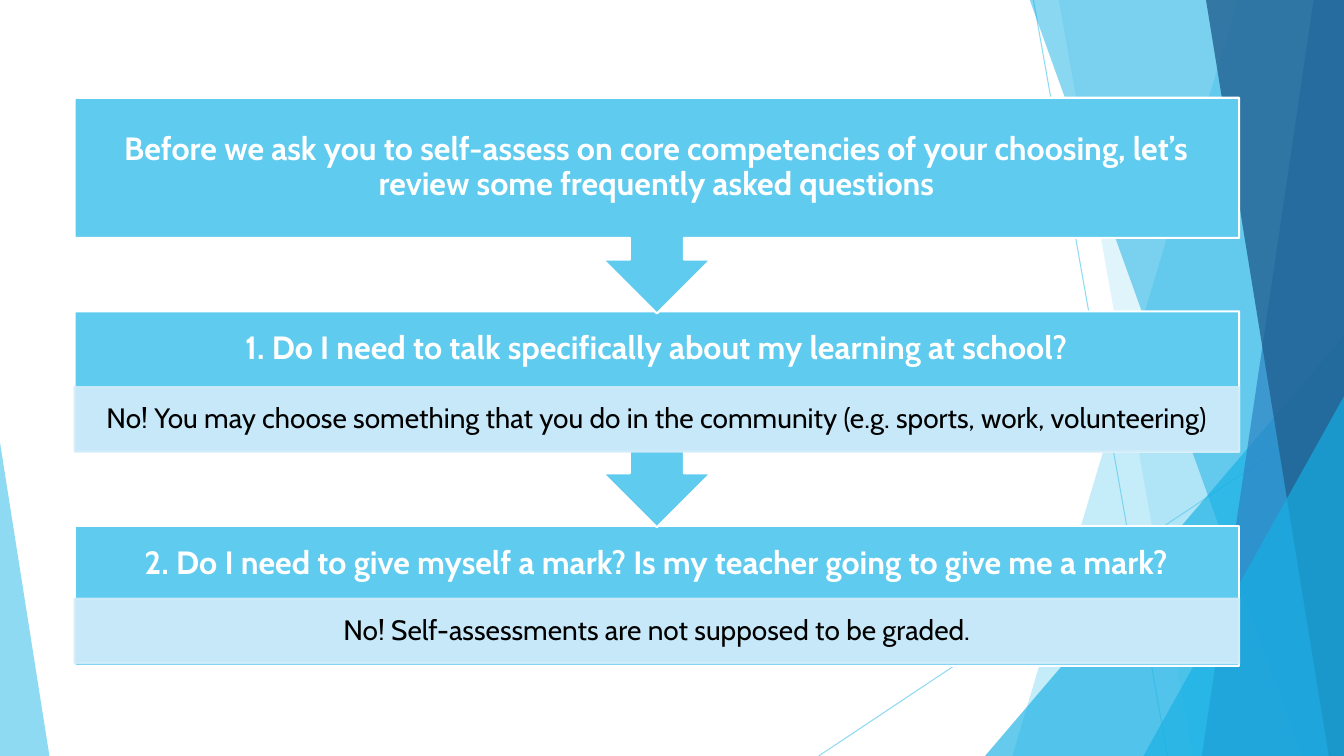
from pptx import Presentation
from pptx.dml.color import RGBColor
from pptx.enum.shapes import MSO_CONNECTOR, MSO_SHAPE
from pptx.enum.text import MSO_ANCHOR, PP_ALIGN
from pptx.oxml.ns import qn
from pptx.util import Pt
from lxml import etree

STRAIGHT = MSO_CONNECTOR.STRAIGHT
TRIANGLE = MSO_SHAPE.ISOSCELES_TRIANGLE
RECTANGLE = MSO_SHAPE.RECTANGLE
CALLOUT = MSO_SHAPE.DOWN_ARROW_CALLOUT
MIDDLE = MSO_ANCHOR.MIDDLE
CENTER = PP_ALIGN.CENTER

PX = 9144
WIDTH, HEIGHT = 1333, 750
SKY, CYAN, BLUE, NAVY = "5FCBEF", "17B0E4", "2E83C3", "226292"
PALE, WHITE, BLACK = "D2ECF9", "FFFFFF", "000000"


def paint(fill, color, opacity=100):
    fill.solid()
    fill.fore_color.rgb = RGBColor.from_string(color)
    if opacity < 100:
        tint = fill._xPr.find(qn("a:solidFill"))[0]
        etree.SubElement(tint, qn("a:alpha"), val=str(opacity * 1000))


def write(box, text, size, color, bold, inset_x, inset_y):
    frame = box.text_frame
    frame.word_wrap = True
    frame.vertical_anchor = MIDDLE
    frame.margin_left = frame.margin_right = inset_x * PX
    frame.margin_top = frame.margin_bottom = inset_y * PX
    para = frame.paragraphs[0]
    para.alignment = CENTER
    para.line_spacing = 0.9
    span = para.add_run()
    span.text = text
    span.font.name = "Cabin"
    span.font.size = Pt(size)
    span.font.bold = bold
    paint(span.font.fill, color)


deck = Presentation()
deck.slide_width = WIDTH * PX
deck.slide_height = HEIGHT * PX
page = deck.slides.add_slide(deck.slide_layouts[6])
shapes = page.shapes

for x1, y1, x2, y2 in [(1025, 0, 1158, HEIGHT), (WIDTH, 403, 812, HEIGHT)]:
    ray = shapes.add_connector(STRAIGHT, x1 * PX, y1 * PX, x2 * PX, y2 * PX)
    ray.line.width = Pt(0.75)
    paint(ray.line.fill, SKY, 70)
    etree.SubElement(ray._element.spPr, qn("a:effectLst"))

facets = [
    ("band", 1228, 1004, SKY, 36),
    ("band", 1050, 1183, SKY, 20),
    ("triangle", 977, 333, 356, 1, CYAN, 66),
    ("band", 1021, 1291, CYAN, 50),
    ("band", 1303, 1192, BLUE, 70),
    ("band", 1196, 1318, NAVY, 80),
    ("triangle", 1134, 393, 199, 1, CYAN, 66),
    ("triangle", 0, 439, 49, 0, SKY, 70),
]
for kind, *geometry, color, opacity in facets:
    if kind == "band":
        top_x, bottom_x = geometry
        outline = shapes.build_freeform(top_x, -1, scale=PX)
        outline.add_line_segments([(WIDTH, -1), (WIDTH, HEIGHT), (bottom_x, HEIGHT)])
        facet = outline.convert_to_shape()
    else:
        left, top, width, apex = geometry
        facet = shapes.add_shape(TRIANGLE, left * PX, top * PX, width * PX, (HEIGHT - top) * PX)
        facet.adjustments[0] = apex
    facet.shadow.inherit = False
    facet.line.fill.background()
    paint(facet.fill, color, opacity)

LEFT, BOX_WIDTH = 74, 1155
ANSWER_HEIGHT = 64
steps = [
    (RECTANGLE, 522, 139, 75, "2. Do I need to give myself a mark? Is my teacher going to give me a mark?",
     594, "No! Self-assessments are not supposed to be graded."),
    (CALLOUT, 309, 214, 75, "1. Do I need to talk specifically about my learning at school?",
     384, "No! You may choose something that you do in the community (e.g. sports, work, volunteering)"),
    (CALLOUT, 97, 214, 139, "Before we ask you to self-assess on core competencies of your choosing, "
     "let’s review some frequently asked questions", None, None),
]
for preset, top, height, heading_height, heading, answer_top, answer in steps:
    panel = shapes.add_shape(preset, LEFT * PX, top * PX, BOX_WIDTH * PX, height * PX)
    panel.shadow.inherit = False
    paint(panel.fill, SKY)
    paint(panel.line.fill, WHITE)
    panel.line.width = Pt(1.5)
    box = shapes.add_textbox(LEFT * PX, top * PX, BOX_WIDTH * PX, heading_height * PX)
    write(box, heading, 23, WHITE, True, 18, 18)
    if answer:
        strip = shapes.add_shape(RECTANGLE, LEFT * PX, answer_top * PX, BOX_WIDTH * PX, ANSWER_HEIGHT * PX)
        strip.shadow.inherit = False
        paint(strip.fill, PALE, 90)
        paint(strip.line.fill, PALE, 90)
        strip.line.width = Pt(1.5)
        write(strip, answer, 20, BLACK, False, 16, 3)

deck.save("out.pptx")
